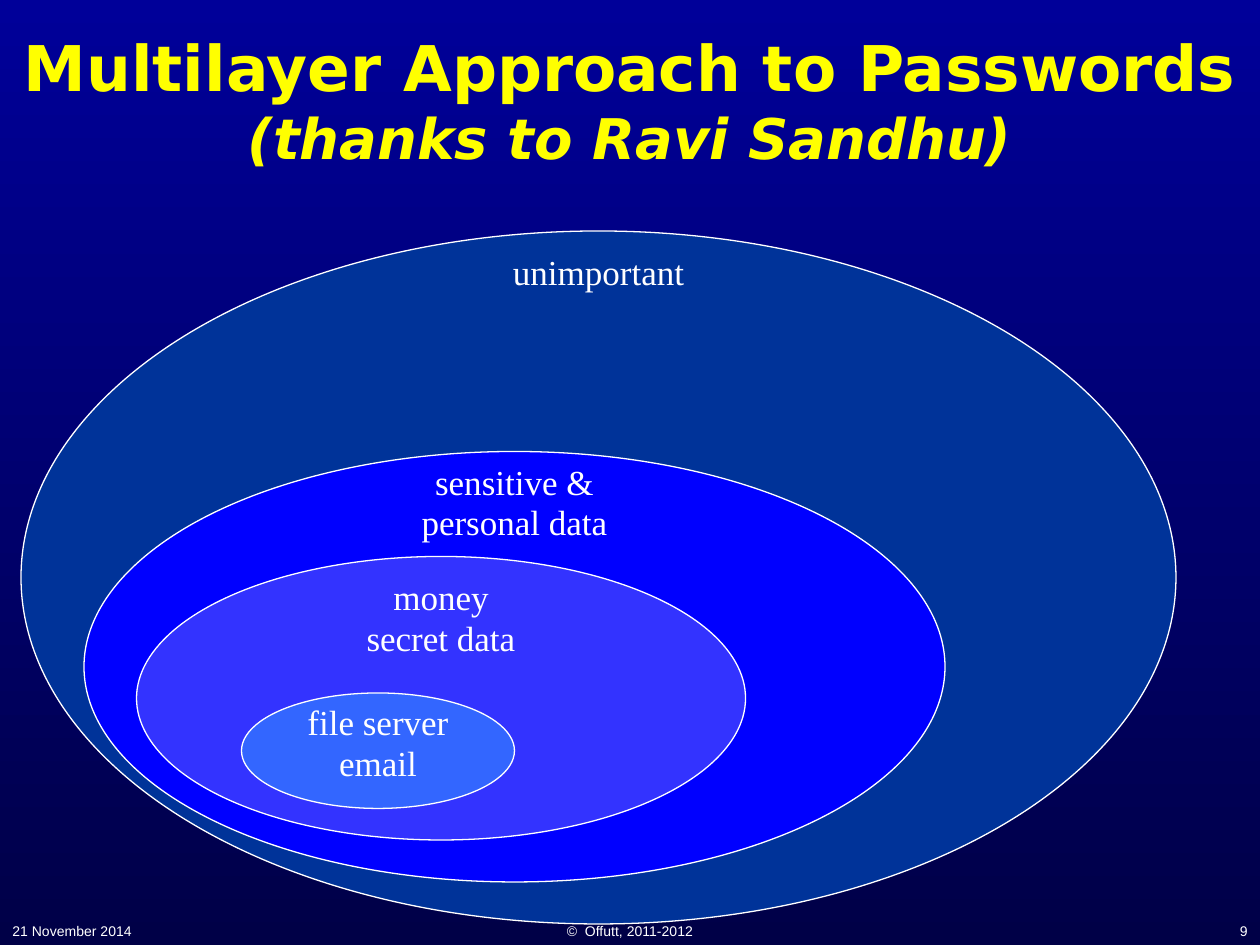
import pptx
import pptx.dml.color
import pptx.enum.shapes
import pptx.enum.text
import pptx.util

EMU_PER_PX = 7620
ALIGN = pptx.enum.text.PP_ALIGN
ANCHOR = pptx.enum.text.MSO_ANCHOR
AUTO_SIZE = pptx.enum.text.MSO_AUTO_SIZE


def px(length):
    return pptx.util.Emu(length * EMU_PER_PX)


def color(value):
    return pptx.dml.color.RGBColor.from_string(value)


class SlideBuilder:
    white = "FFFFFF"
    yellow = "FFFF00"
    title_font = "DejaVu Sans"
    label_font = "Times New Roman"
    footer_font = "Arial"

    def __init__(self, page):
        self.page = page

    def background(self, top, bottom):
        fill = self.page.background.fill
        fill.gradient()
        fill.gradient_angle = 270
        for stop, value in zip(fill.gradient_stops, (top, bottom)):
            stop.color.rgb = color(value)

    def span(self, para, text, font, size, value, bold=False, italic=False):
        span = para.add_run()
        span.text = text
        span.font.name = font
        span.font.size = pptx.util.Pt(size)
        span.font.color.rgb = color(value)
        span.font.bold = bold
        span.font.italic = italic

    def title(self, heading, subheading, *bounds):
        box = self.page.shapes.title
        box.left, box.top, box.width, box.height = map(px, bounds)
        frame = box.text_frame
        frame.word_wrap = True
        frame.auto_size = AUTO_SIZE.NONE
        frame.vertical_anchor = ANCHOR.MIDDLE
        para = frame.paragraphs[0]
        para.alignment = ALIGN.CENTER
        self.span(para, heading, self.title_font, 36, self.yellow, bold=True)
        para.add_line_break()
        self.span(para, subheading, self.title_font, 32, self.yellow, bold=True, italic=True)

    def footer(self, text, left, width, alignment):
        box = self.page.shapes.add_textbox(px(left), px(870), px(width), px(30))
        frame = box.text_frame
        frame.word_wrap = True
        frame.vertical_anchor = ANCHOR.BOTTOM
        para = frame.paragraphs[0]
        para.alignment = alignment
        self.span(para, text, self.footer_font, 8, self.white)

    def layer(self, lines, fill, bounds, label_top):
        group = self.page.shapes.add_group_shape()
        left, top, width, height = bounds
        oval = group.shapes.add_shape(
            pptx.enum.shapes.MSO_SHAPE.OVAL, px(left), px(top), px(width), px(height))
        oval.shadow.inherit = False
        oval.fill.solid()
        oval.fill.fore_color.rgb = color(fill)
        oval.line.color.rgb = color(self.white)
        oval.line.width = pptx.util.Pt(0.75)

        label_width = 220
        label_left = left + (width - label_width) // 2
        label_height = 32 + 40 * (len(lines) - 1)
        box = group.shapes.add_textbox(
            px(label_left), px(label_top), px(label_width), px(label_height))
        frame = box.text_frame
        frame.word_wrap = True
        frame.auto_size = AUTO_SIZE.SHAPE_TO_FIT_TEXT
        for index, line in enumerate(lines):
            para = frame.add_paragraph() if index else frame.paragraphs[0]
            para.alignment = ALIGN.CENTER
            para.line_spacing = 0.5
            para.space_before = pptx.util.Pt(11)
            self.span(para, line, self.label_font, 20, self.white)


def main():
    deck = pptx.Presentation()
    deck.slide_width, deck.slide_height = px(1200), px(900)
    builder = SlideBuilder(deck.slides.add_slide(deck.slide_layouts[5]))
    builder.background("000099", "000047")
    builder.title("Multilayer Approach to Passwords", "(thanks to Ravi Sandhu)",
                  10, 10, 1180, 170)

    builder.footer("21 November 2014", 0, 250, ALIGN.LEFT)
    builder.footer("©  Offutt, 2011-2012", 410, 380, ALIGN.CENTER)
    builder.footer("9", 950, 250, ALIGN.RIGHT)

    layers = [
        (["unimportant"], "003399", (20, 220, 1100, 660), 250),
        (["sensitive &", "personal data"], "0000FF", (80, 430, 820, 410), 450),
        (["money", "secret data"], "3333FF", (130, 530, 580, 270), 560),
        (["file server", "email"], "3366FF", (230, 660, 260, 110), 679),
    ]
    for layer in layers:
        builder.layer(*layer)
    deck.save("out.pptx")


if __name__ == "__main__":
    main()
